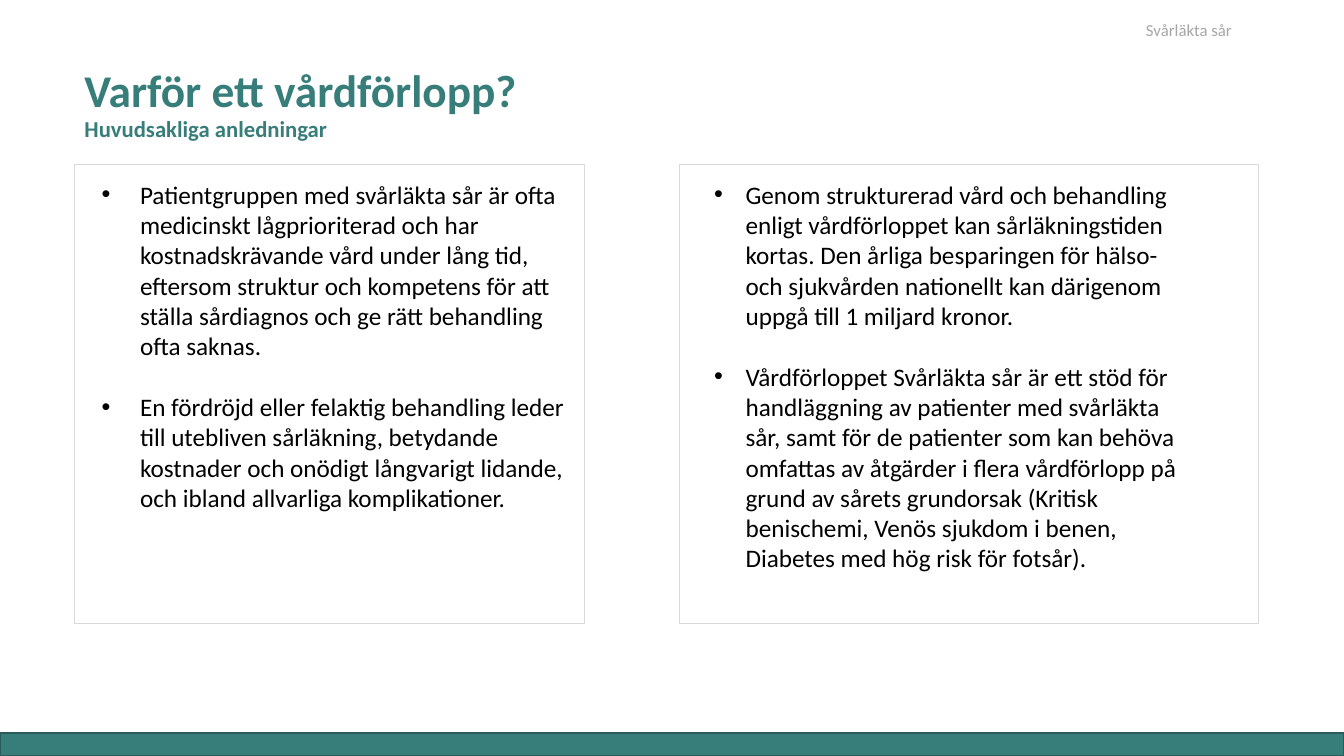
from lxml import etree
from pptx import Presentation
from pptx.dml.color import RGBColor
from pptx.enum import shapes, text
from pptx.oxml.ns import qn
from pptx.util import Cm, Pt

TITLE = "Varför ett vårdförlopp?"
SUBTITLE = "Huvudsakliga anledningar"
TOPIC = "Svårläkta sår"

# Frame left and width, text left and width, and bullet indent, in cm
COLUMNS = [
    {"frame": (1.88, 12.85), "body": (2.31, 12.27), "indent": 0.97, "reasons": [
        "Patientgruppen med svårläkta sår är ofta medicinskt lågprioriterad och har "
        "kostnadskrävande vård under lång tid, eftersom struktur och kompetens för att "
        "ställa sårdiagnos och ge rätt behandling ofta saknas.",
        "En fördröjd eller felaktig behandling leder till utebliven sårläkning, "
        "betydande kostnader och onödigt långvarigt lidande, och ibland allvarliga "
        "komplikationer.",
    ]},
    {"frame": (17.12, 14.6), "body": (17.75, 12.24), "indent": 0.79, "reasons": [
        "Genom strukturerad vård och behandling enligt vårdförloppet kan "
        "sårläkningstiden kortas. Den årliga besparingen för hälso- och sjukvården "
        "nationellt kan därigenom uppgå till 1 miljard kronor.",
        "Vårdförloppet Svårläkta sår är ett stöd för handläggning av patienter med "
        "svårläkta sår, samt för de patienter som kan behöva omfattas av åtgärder i "
        "flera vårdförlopp på grund av sårets grundorsak (Kritisk benischemi, Venös "
        "sjukdom i benen, Diabetes med hög risk för fotsår).",
    ]},
]

THEME = {
    "font": "Calibri",
    "teal": "377D7A", "teal_dark": "295C5A", "frame": "D9D9D9",
    "grey": "A6A6A6", "black": "000000",
    "title": 32.4, "subtitle": 16.2, "body": 18, "topic": 12,
}
WIDTH, HEIGHT = 33.87, 19.05
BAR_HEIGHT = 0.58
FRAME_TOP, FRAME_HEIGHT = 4.14, 11.58
BODY_TOP, BODY_HEIGHT = 4.39, 10.26


def color(name):
    return RGBColor.from_string(THEME[name])


def add_box(slide, box, line, fill=None):
    sp = slide.shapes.add_shape(shapes.MSO_SHAPE.RECTANGLE, *map(Cm, box))
    sp.shadow.inherit = False
    if fill:
        sp.fill.solid()
        sp.fill.fore_color.rgb = color(fill)
    else:
        sp.fill.background()
    sp.line.color.rgb = color(line)
    sp.line.width = Pt(1)


def add_text(slide, box, lines, size, ink="black", bold=False):
    tf = slide.shapes.add_textbox(*map(Cm, box)).text_frame
    tf.word_wrap = True
    tf.text = "\n".join(lines)
    for p in tf.paragraphs:
        for r in p.runs:
            r.font.name = THEME["font"]
            r.font.size = Pt(THEME[size])
            r.font.bold = bold
            r.font.color.rgb = color(ink)
    return tf


def add_bullet(p, indent):
    pPr = p._p.get_or_add_pPr()
    pPr.set("marL", str(Cm(indent)))
    pPr.set("indent", str(-Cm(indent)))
    etree.SubElement(pPr, qn("a:buFont")).set("typeface", "Arial")
    etree.SubElement(pPr, qn("a:buChar")).set("char", "•")


def add_title(slide):
    tf = add_text(slide, (1.88, 2.01, 25.4, 1.7), [TITLE, SUBTITLE], "title", "teal", True)
    tf.vertical_anchor = text.MSO_ANCHOR.BOTTOM
    for p in tf.paragraphs:
        p.line_spacing = 0.9
    tf.paragraphs[1].runs[0].font.size = Pt(THEME["subtitle"])


def add_column(slide, column):
    left, width = column["frame"]
    add_box(slide, (left, FRAME_TOP, width, FRAME_HEIGHT), "frame")
    left, width = column["body"]
    tf = add_text(slide, (left, BODY_TOP, width, BODY_HEIGHT), column["reasons"], "body")
    for i, p in enumerate(tf.paragraphs):
        if i:
            p.space_before = Pt(22)
        add_bullet(p, column["indent"])


def main():
    prs = Presentation()
    prs.slide_width, prs.slide_height = Cm(WIDTH), Cm(HEIGHT)
    slide = prs.slides.add_slide(prs.slide_layouts[6])
    add_box(slide, (0, HEIGHT - BAR_HEIGHT, WIDTH, BAR_HEIGHT), "teal_dark", "teal")
    add_title(slide)
    for column in COLUMNS:
        add_column(slide, column)
    add_text(slide, (28.63, 0.38, 4.32, 0.76), [TOPIC], "topic", "grey")
    prs.save("out.pptx")


if __name__ == "__main__":
    main()
